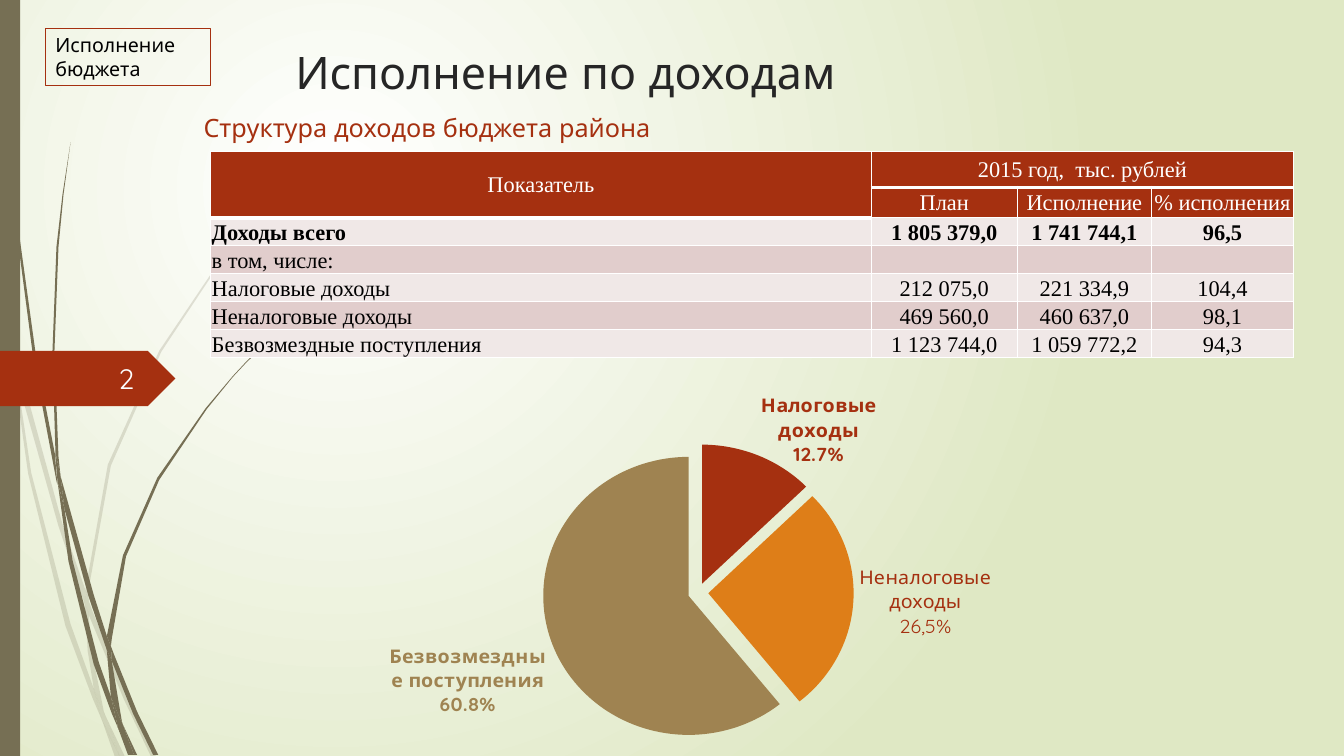
"""Build a slide on budget revenue: a results table above a pie chart of the revenue structure."""
import lxml.etree
import pptx
import pptx.chart.data
import pptx.dml.color
import pptx.enum.chart
import pptx.enum.shapes
import pptx.enum.text
import pptx.oxml.ns
import pptx.util

Inches = pptx.util.Inches
qn = pptx.oxml.ns.qn
ALIGN = pptx.enum.text.PP_ALIGN
ANCHOR = pptx.enum.text.MSO_ANCHOR
SHAPE = pptx.enum.shapes.MSO_SHAPE
OUTSIDE = pptx.enum.chart.XL_LABEL_POSITION.OUTSIDE_END

THEME = {
    "red": "A53010", "orange": "DE7E18", "tan": "9F8351", "grass": "766F54", "white": "FFFFFF",
    "black": "000000", "title": "262626", "number": "FEFFFF", "glow": "DFE8C4",
    "bands": ("F0E8E7", "E1CDCC"), "font": "Quicksand", "table_font": "Times New Roman",
    "title_size": 32, "number_size": 20, "subtitle_size": 18, "table_size": 16, "label_size": 14,
    "chart_size": 10,
}
TEXTS = [
    ("Исполнение по доходам", (2.83, 0.34, 9.75, 0.74), "title_size", "title", ANCHOR.MIDDLE, ALIGN.LEFT),
    ("2", (0.58, 3.55, 0.85, 0.4), "number_size", "number", ANCHOR.MIDDLE, ALIGN.RIGHT),
    ("Структура доходов бюджета района", (1.92, 1.07, 10.91, 0.4), "subtitle_size", "red", ANCHOR.TOP, ALIGN.LEFT),
    ("Исполнение бюджета", (0.45, 0.28, 1.64, 0.57), "label_size", "black", ANCHOR.TOP, ALIGN.LEFT),
]
ROWS = [
    ("Показатель", "2015 год,  тыс. рублей", "", ""),
    ("", "План", "Исполнение", "% исполнения"),
    ("Доходы всего", "1 805 379,0", "1 741 744,1", "96,5"),
    ("в том, числе:", "", "", ""),
    ("Налоговые доходы", "212 075,0", "221 334,9", "104,4"),
    ("Неналоговые доходы", "469 560,0", "460 637,0", "98,1"),
    ("Безвозмездные поступления", "1 123 744,0", "1 059 772,2", "94,3"),
]
COLUMN_WIDTHS = (6.55, 1.45, 1.33, 1.41)
ROW_HEIGHTS = (0.36, 0.3) + (0.26,) * 5
HEADER_ROWS, TOTAL_ROW = 2, 2
SHARES = [
    ("Налоговые доходы", 12.7, "red", "red", None),
    ("Неналоговые доходы", 26.5, "orange", "red", "Неналоговые доходы\n26,5%"),
    ("Безвозмездные поступления", 60.8, "tan", "tan", None),
]
EXPLOSION = 7
PLOT_AREA = {"x": 0.03, "y": 0.17, "w": 0.96, "h": 0.79}
FAINT_BLADES = [
    (0.11, 3.5, 0.09, 3.22, 0, 2.82, 0, 2.99, 0.1, 3.44),
    (0.58, 5.22, 0.84, 5.99, 0.85, 5.86, 0.62, 5.2, 0.14, 3.45, 0.17, 3.76),
    (0.92, 6.07, 0.88, 5.96, 0.88, 6.1, 1.23, 6.94, 1.5, 7.51, 1.55, 7.51, 1.27, 6.92),
    (1.19, 7.51, 1.24, 7.51, 1.05, 7.11),
    (0.93, 6.83, 0.7, 6.19, 0.31, 4.69, 0.17, 3.76, 0.11, 3.5, 0.28, 4.7, 0.65, 6.21, 0.92, 6.93, 1.01, 7.14, 0.99, 7.07),
    (0.84, 5.99, 0.87, 6.46, 0.93, 6.83, 0.96, 6.92, 1.05, 7.11, 1.03, 7.06, 0.91, 6.46, 0.88, 6.1, 0.88, 6.08),
    (0.88, 5.84, 1.1, 4.62, 1.6, 3.49, 2.29, 2.45, 2.68, 1.98, 2.9, 1.75, 3.12, 1.54, 3.12, 1.53, 2.89, 1.75,
     2.68, 1.97, 2.28, 2.44, 1.58, 3.48, 1.07, 4.61, 0.85, 5.84, 0.85, 5.86, 0.88, 5.96),
    (1.01, 7.14, 1.14, 7.51, 1.19, 7.51),
    (0.88, 6.08, 0.88, 6.1, 0.88, 5.96, 0.85, 5.86, 0.84, 5.99),
    (0.96, 6.92, 0.93, 6.83, 0.99, 7.07, 1.01, 7.14, 1.19, 7.51, 1.05, 7.11),
]
SOLID_BLADES = [
    (0.07, 1.1, 0.17, 2.33, 0.33, 3.55, 0.56, 4.77, 0.57, 4.81, 0.55, 4.57, 0.55, 4.53, 0.36, 3.55, 0.19, 2.32,
     0.08, 1.09, 0.05, 0.48, 0.04, 0, 0.03, 0, 0.04, 0.48),
    (0.88, 5.92, 1.06, 6.45, 1.06, 6.33, 1.06, 6.31, 0.93, 5.9, 0.6, 4.72, 0.64, 5.05),
    (1.13, 6.49, 1.1, 6.41, 1.11, 6.56, 1.32, 7.08, 1.52, 7.49, 1.57, 7.49, 1.36, 7.06),
    (1.1, 6.91, 0.98, 6.57, 0.72, 5.56, 0.64, 5.05, 0.57, 4.77, 0.68, 5.57, 0.93, 6.59, 1.11, 7.08, 1.17, 7.22, 1.16, 7.17),
    (0.6, 4.72, 0.58, 4.53, 0.54, 3.49, 0.58, 2.45, 0.63, 1.93, 0.7, 1.41, 0.62, 1.93, 0.56, 2.45, 0.52, 3.49, 0.55, 4.49),
    (1.33, 7.49, 1.36, 7.49, 1.22, 7.19),
    (0.57, 4.77, 0.64, 5.05, 0.6, 4.72, 0.55, 4.49, 0.55, 4.53),
    (1.11, 6.33, 1.25, 5.52, 1.58, 4.76, 2.05, 4.06, 2.31, 3.74, 2.45, 3.59, 2.61, 3.44, 2.6, 3.44, 2.45, 3.58,
     2.31, 3.73, 2.04, 4.05, 1.56, 4.74, 1.22, 5.51, 1.06, 6.31, 1.1, 6.41),
    (1.17, 7.22, 1.27, 7.49, 1.31, 7.49),
    (1.06, 6.45, 1.1, 6.91, 1.16, 7.06, 1.22, 7.19, 1.21, 7.16, 1.11, 6.56, 1.09, 6.51),
    (1.06, 6.45, 1.09, 6.51, 1.11, 6.56, 1.1, 6.41, 1.06, 6.31, 1.06, 6.33),
    (1.16, 7.06, 1.1, 6.91, 1.16, 7.17, 1.17, 7.22, 1.3, 7.49, 1.33, 7.49, 1.22, 7.19),
]


def color(value):
    return pptx.dml.color.RGBColor.from_string(value)


def style(font, name, size, value, bold=False):
    font.name, font.size, font.bold = name, pptx.util.Pt(size), bold
    font.color.rgb = color(value)


def paint(shape, value):
    shape.shadow.inherit = False
    shape.fill.solid()
    shape.fill.fore_color.rgb = color(value)
    shape.line.fill.background()


def add_child(parent, tag, **attributes):
    return lxml.etree.SubElement(parent, qn(tag), attributes)


def paint_background(page):
    fill = page.background.fill
    fill.gradient()
    for stop, value, position in zip(fill.gradient_stops, (THEME["white"], THEME["glow"]), (0, 1)):
        stop.color.rgb, stop.position = color(value), position
    gradient = page.element.xpath(".//a:gradFill")[0]
    for line in gradient.findall(qn("a:lin")):
        gradient.remove(line)
    circle = add_child(gradient, "a:path", path="circle")
    add_child(circle, "a:fillToRect", l="50000", t="50000", r="100000", b="100000")


def add_blade(page, numbers, opacity):
    lengths = [Inches(number) for number in numbers]
    start, *outline = zip(lengths[::2], lengths[1::2])
    builder = page.shapes.build_freeform(*start, scale=1.0)
    builder.add_line_segments(outline, close=True)
    blade = builder.convert_to_shape()
    paint(blade, THEME["grass"])
    if opacity < 100:
        add_child(blade.element.xpath("./p:spPr/a:solidFill/a:srgbClr")[0], "a:alpha", val=str(opacity * 1000))


def add_text(page, text, place, size, tone, anchor, align):
    box = page.shapes.add_textbox(*map(Inches, place))
    frame = box.text_frame
    frame.word_wrap, frame.vertical_anchor = True, anchor
    para = frame.paragraphs[0]
    para.text, para.alignment = text, align
    style(para.font, THEME["font"], THEME[size], THEME[tone])
    return box


def add_borders(cell, bottom):
    properties = cell._tc.get_or_add_tcPr()
    for index, (side, width) in enumerate((("L", 1), ("R", 1), ("T", 1), ("B", bottom))):
        line = lxml.etree.Element(qn("a:ln" + side), w=str(pptx.util.Pt(width)))
        add_child(add_child(line, "a:solidFill"), "a:srgbClr", val=THEME["white"])
        properties.insert(index, line)


def add_results(page):
    size = (sum(COLUMN_WIDTHS), sum(ROW_HEIGHTS))
    table = page.shapes.add_table(len(ROWS), len(COLUMN_WIDTHS), *map(Inches, (2.09, 1.5) + size)).table
    for column, width in zip(table.columns, COLUMN_WIDTHS):
        column.width = Inches(width)
    for r, row in enumerate(ROWS):
        table.rows[r].height = Inches(ROW_HEIGHTS[r])
        header = r < HEADER_ROWS
        for c, text in enumerate(row):
            cell = table.cell(r, c)
            cell.margin_left = cell.margin_right = cell.margin_top = Inches(0.01)
            cell.margin_bottom = 0
            cell.vertical_anchor = ANCHOR.MIDDLE if header else ANCHOR.BOTTOM
            cell.fill.solid()
            cell.fill.fore_color.rgb = color(THEME["red"] if header else THEME["bands"][r % 2])
            add_borders(cell, 3 if r == 0 or (header and c == 0) else 1)
            para = cell.text_frame.paragraphs[0]
            para.text = text
            para.alignment = ALIGN.CENTER if header or c else ALIGN.LEFT
            style(para.font, THEME["table_font"], THEME["table_size"], THEME["white" if header else "black"], r == TOTAL_ROW)
            if not text:
                add_child(para._p, "a:endParaRPr", sz=str(THEME["table_size"] * 100))
    table.cell(0, 0).merge(table.cell(1, 0))
    table.cell(0, 1).merge(table.cell(0, 3))


def add_label(label, tone, text):
    fonts = [label.font]
    if text:
        label.text_frame.text = text
        fonts = [para.font for para in label.text_frame.paragraphs]
    for font in fonts:
        style(font, THEME["font"], THEME["label_size"], THEME[tone], not text)
    label.position = OUTSIDE


def add_pie(page):
    data = pptx.chart.data.CategoryChartData()
    data.categories = [share[0] for share in SHARES]
    data.add_series("Series 1", [share[1] for share in SHARES])
    place = map(Inches, (2.83, 3.75, 8.03, 3.65))
    chart = page.shapes.add_chart(pptx.enum.chart.XL_CHART_TYPE.PIE, *place, data).chart
    chart.has_title = chart.has_legend = False
    style(chart.font, THEME["font"], THEME["chart_size"], THEME["black"])
    chart.plots[0].vary_by_categories = True
    series = chart.plots[0].series[0]
    for index, (_, _, fill, tone, text) in enumerate(SHARES):
        point = series.points[index]
        point.format.fill.solid()
        point.format.fill.fore_color.rgb = color(THEME[fill])
        add_label(point.data_label, tone, text)
    labels = series.data_labels
    labels.show_value, labels.show_percentage, labels.show_category_name = False, True, True
    labels.number_format, labels.number_format_is_linked = "0.0%", False
    labels.position = OUTSIDE
    for label in series._element.xpath(".//c:dLbl"):
        for tag, shown in (("c:showVal", "0"), ("c:showCatName", "1"), ("c:showPercent", "1")):
            label.find(qn(tag)).set("val", shown)
        if label.find(qn("c:tx")) is None:
            label.insert(1, lxml.etree.Element(qn("c:numFmt"), formatCode="0.0%", sourceLinked="0"))
        add_child(label, "c:separator").text = "\n"
    for fill in series._element.xpath("./c:dPt/c:spPr"):
        fill.addprevious(lxml.etree.Element(qn("c:explosion"), val=str(EXPLOSION)))
    area = chart._chartSpace.xpath(".//c:plotArea")[0]
    for layout in area.findall(qn("c:layout")):
        area.remove(layout)
    layout = lxml.etree.Element(qn("c:layout"))
    area.insert(0, layout)
    manual = add_child(layout, "c:manualLayout")
    for tag, value in [("layoutTarget", "inner"), ("xMode", "edge"), ("yMode", "edge"), *PLOT_AREA.items()]:
        add_child(manual, "c:" + tag, val=str(value))


def main():
    deck = pptx.Presentation()
    deck.slide_width, deck.slide_height = Inches(13.33), Inches(7.5)
    page = deck.slides.add_slide(deck.slide_layouts[6])
    paint_background(page)
    for blades, opacity in ((FAINT_BLADES, 20), (SOLID_BLADES, 100)):
        for blade in blades:
            add_blade(page, blade, opacity)
    for kind, place, tone in ((SHAPE.RECTANGLE, (0, 0, 0.2, 7.5), "grass"), (SHAPE.PENTAGON, (0, 3.48, 1.74, 0.55), "red")):
        paint(page.shapes.add_shape(kind, *map(Inches, place)), THEME[tone])
    *_, badge = [add_text(page, *entry) for entry in TEXTS]
    badge.line.color.rgb = color(THEME["red"])
    badge.line.width = pptx.util.Pt(0.75)
    add_results(page)
    add_pie(page)
    deck.save("out.pptx")


if __name__ == "__main__":
    main()
